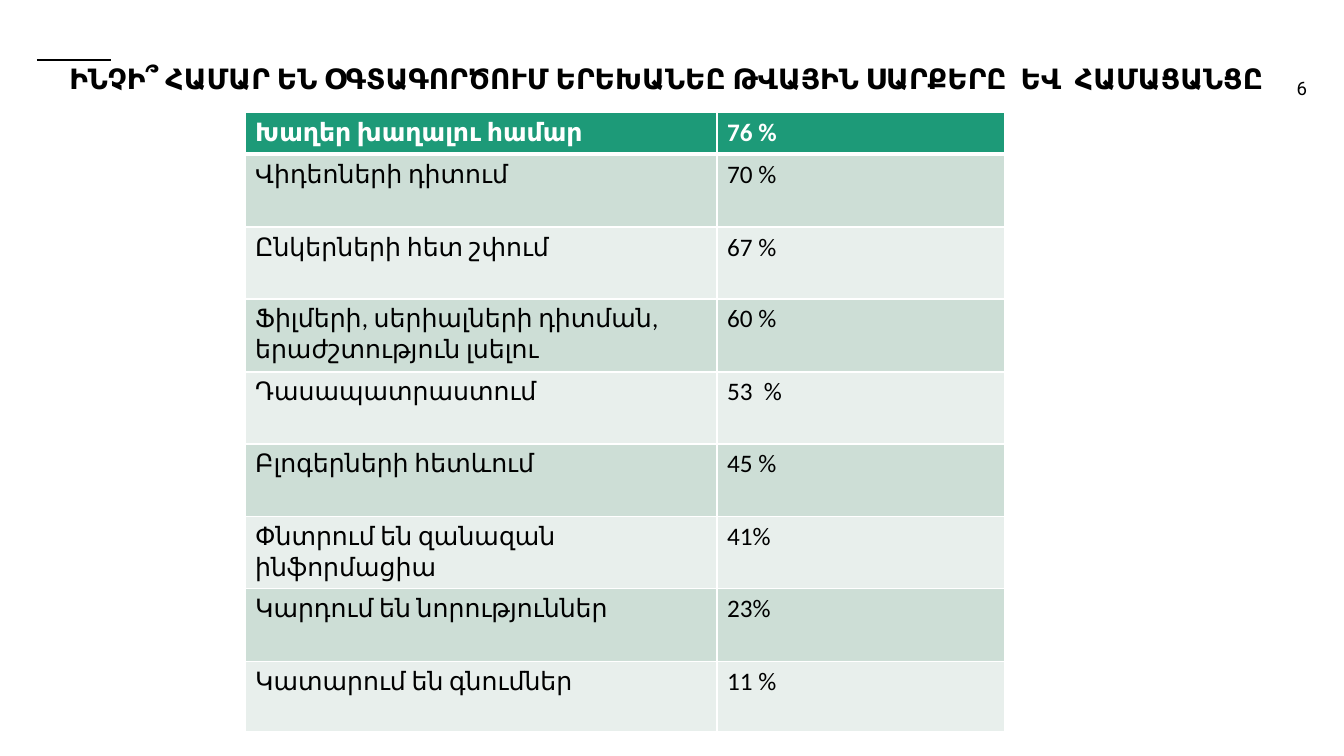
from lxml.etree import SubElement
from pptx import Presentation
from pptx.dml.color import RGBColor
from pptx.enum.shapes import MSO_CONNECTOR
from pptx.enum.text import MSO_ANCHOR, PP_ALIGN
from pptx.oxml.ns import qn
from pptx.util import Pt

PX = 914400 / 100.8
BLACK = RGBColor(0x00, 0x00, 0x00)
WHITE = RGBColor(0xFF, 0xFF, 0xFF)
GREEN = RGBColor(0x1D, 0x9A, 0x78)
BAND_DARK = RGBColor(0xCD, 0xDE, 0xD6)
BAND_LIGHT = RGBColor(0xE8, 0xEF, 0xEC)

TITLE = "ԻՆՉԻ՞ ՀԱՄԱՐ ԵՆ ՕԳՏԱԳՈՐԾՈՒՄ ԵՐԵԽԱՆԵԸ ԹՎԱՅԻՆ ՍԱՐՔԵՐԸ  ԵՎ  ՀԱՄԱՑԱՆՑԸ"
USES = [
    ("Խաղեր խաղալու համար", "76 %"),
    ("Վիդեոների դիտում", "70 %"),
    ("Ընկերների հետ շփում", "67 %"),
    ("Ֆիլմերի, սերիալների դիտման, երաժշտություն լսելու", "60 %"),
    ("Դասապատրաստում", "53  %"),
    ("Բլոգերների հետևում", "45 %"),
    ("Փնտրում են զանազան ինֆորմացիա", "41%"),
    ("Կարդում են նորություններ", "23%"),
    ("Կատարում են գնումներ", "11 %"),
]
HEADER_HEIGHT, LAST_HEIGHT = 42, 70
USE_WIDTH = 472


def px(length):
    return round(length * PX)


def style_font(font, name, size, color, bold=False):
    font.name = name
    font.size = Pt(size)
    font.color.rgb = color
    font.bold = bold


def add_label(slide, box, text, size, align, bold=False):
    shape = slide.shapes.add_textbox(*map(px, box))
    frame = shape.text_frame
    frame.word_wrap = True
    frame.vertical_anchor = MSO_ANCHOR.TOP
    frame.text = text
    paragraph = frame.paragraphs[0]
    paragraph.alignment = align
    style_font(paragraph.runs[0].font, "Roboto", size, BLACK, bold)
    return paragraph


def add_accent_line(slide, left, top, width):
    line = slide.shapes.add_connector(
        MSO_CONNECTOR.STRAIGHT, px(left), px(top), px(left + width), px(top))
    line.line.color.rgb = BLACK
    line.line.width = Pt(1.5)
    SubElement(line._element.spPr, qn("a:effectLst"))


def add_borders(cell, top, bottom):
    """Draw white cell borders; top and bottom are widths in points."""
    properties = cell._tc.get_or_add_tcPr()
    for side, width in (("L", 1), ("R", 1), ("T", top), ("B", bottom)):
        border = SubElement(properties, qn(f"a:ln{side}"), w=str(Pt(width)))
        fill = SubElement(border, qn("a:solidFill"))
        SubElement(fill, qn("a:srgbClr"), val=str(WHITE))


def row_heights(height):
    """Share what the first and last rows leave evenly among the others."""
    count = len(USES) - 2
    shared = height - HEADER_HEIGHT - LAST_HEIGHT
    edges = [round(shared * index / count) for index in range(count + 1)]
    middle = [end - start for start, end in zip(edges, edges[1:])]
    return [HEADER_HEIGHT, *middle, LAST_HEIGHT]


def add_uses_table(slide, box):
    width, height = box[2:]
    table = slide.shapes.add_table(len(USES), 2, *map(px, box)).table
    for column, column_width in zip(table.columns, (USE_WIDTH, width - USE_WIDTH)):
        column.width = px(column_width)
    for index, (texts, row_height) in enumerate(zip(USES, row_heights(height))):
        header = index == 0
        band = BAND_DARK if index % 2 else BAND_LIGHT
        row = table.rows[index]
        row.height = px(row_height)
        for cell, text in zip(row.cells, texts):
            add_borders(cell, 3 if index == 1 else 1, 3 if header else 1)
            cell.fill.solid()
            cell.fill.fore_color.rgb = GREEN if header else band
            cell.text_frame.text = text
            style_font(cell.text_frame.paragraphs[0].runs[0].font,
                       "Calibri", 18, WHITE if header else BLACK, header)


def main():
    presentation = Presentation()
    presentation.slide_width = px(1344)
    presentation.slide_height = px(756)
    slide = presentation.slides.add_slide(presentation.slide_layouts[6])
    add_label(slide, (1125, 72, 192, 33), "6", 13.3, PP_ALIGN.RIGHT)
    add_accent_line(slide, 37, 60, 74)
    add_uses_table(slide, (245, 112, 760, 620))
    title = add_label(slide, (21, 60, 1291, 47), TITLE, 20, PP_ALIGN.CENTER, True)
    title.line_spacing = 0.9
    presentation.save("out.pptx")


if __name__ == "__main__":
    main()
